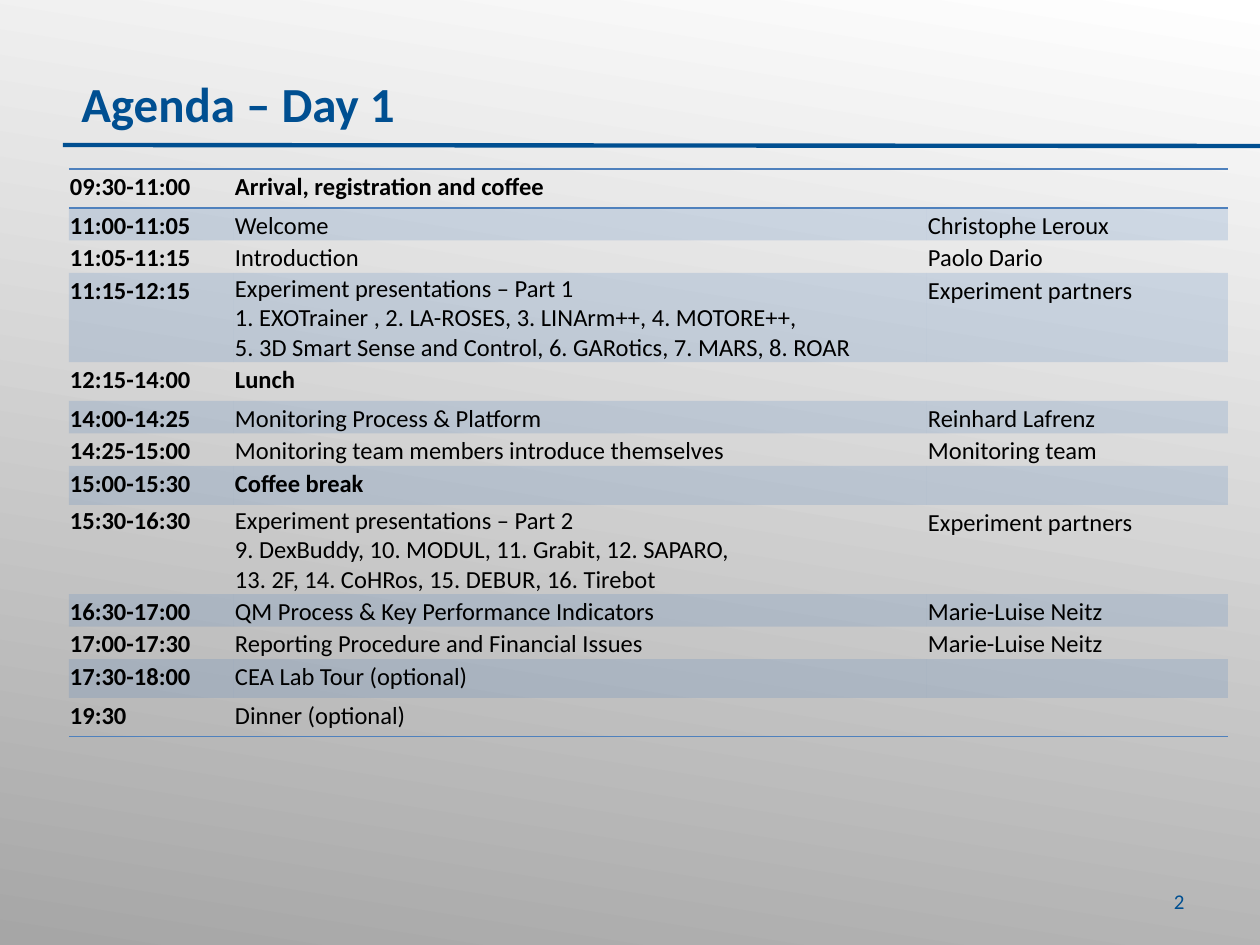
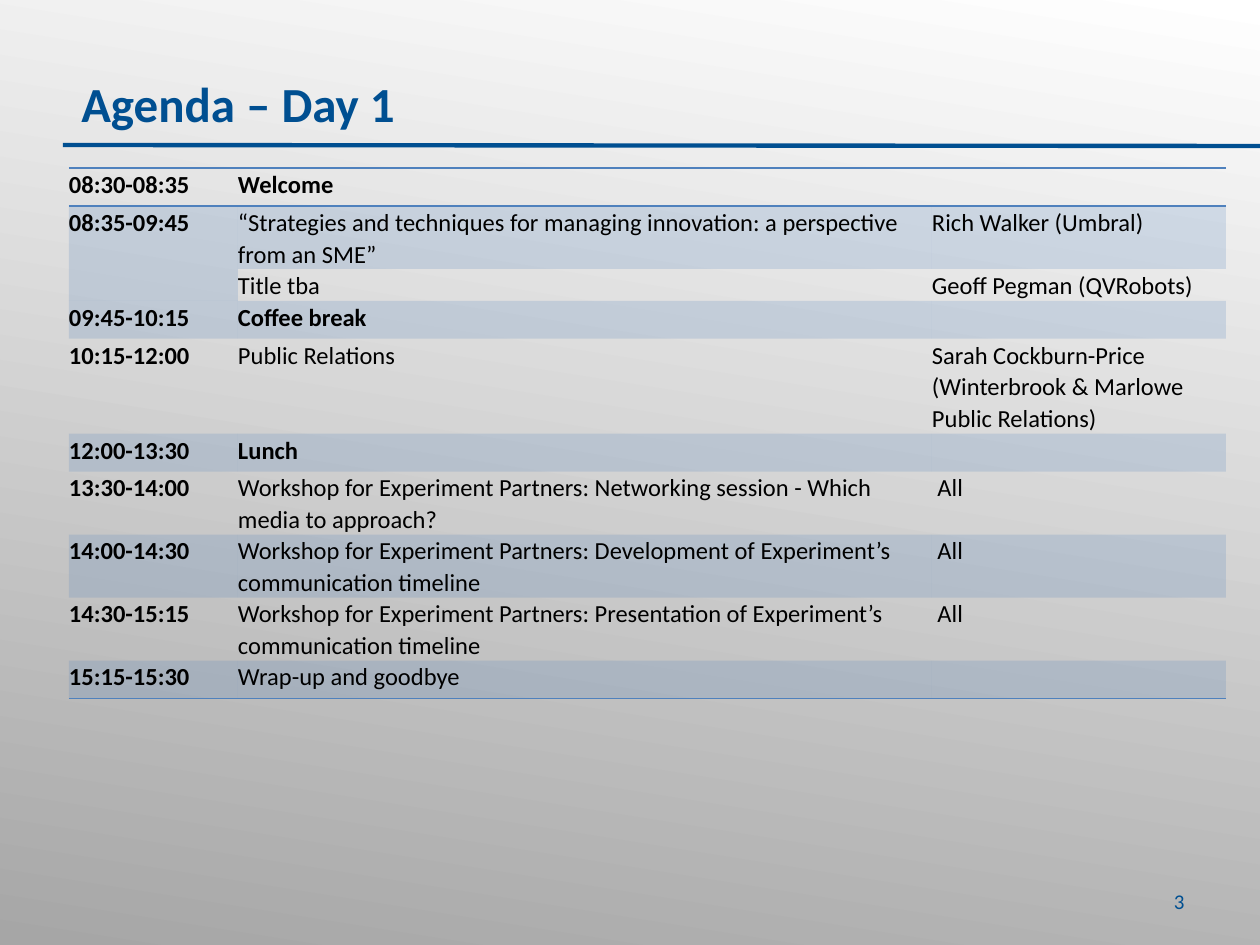
from dataclasses import dataclass

from lxml import etree
from pptx import Presentation
from pptx import util as u
from pptx.dml.color import RGBColor
from pptx.enum import shapes, text
from pptx.oxml.ns import qn

PX = 7257.6  # EMU per px at 126 px to the inch
WIDTH, HEIGHT = 1260, 945
FONT = "Calibri"
COLORS = {
    "title": "004F91",
    "body": "000000",
    "table": "4F81BD",
    "bg_top": "FFFFFF",
    "bg_bottom": "A6A6A6",
}
BAND_OPACITY = 20
LINE_SPACING = 1.07
NO_STYLE_NO_GRID = "{2D5ABB26-0587-4C30-8999-92F81FD0307C}"


@dataclass(frozen=True)
class Entry:
    time: str
    topic: str
    who: str = ""
    height: int = 32
    is_break: bool = False
    single_spaced: tuple[int, ...] = ()  # columns set without extra leading
    shares_time: bool = False  # the time cell of the row above extends here


@dataclass(frozen=True)
class Agenda:
    title: str
    number: int
    top: int
    columns: tuple[int, int, int]
    inset: int
    entries: tuple[Entry, ...]


AGENDAS = (
    Agenda("Agenda – Day 1", 2, 169, (165, 693, 301), 1, (
        Entry("09:30-11:00", "Arrival, registration and coffee", is_break=True),
        Entry("11:00-11:05", "Welcome", "Christophe Leroux"),
        Entry("11:05-11:15", "Introduction", "Paolo Dario"),
        Entry("11:15-12:15",
              "Experiment presentations – Part 1\n"
              "1. EXOTrainer , 2. LA-ROSES, 3. LINArm++, 4. MOTORE++,\n"
              "5. 3D Smart Sense and Control, 6. GARotics, 7. MARS, 8. ROAR",
              "Experiment partners", 89, single_spaced=(1,)),
        Entry("12:15-14:00", "Lunch", is_break=True),
        Entry("14:00-14:25", "Monitoring Process & Platform", "Reinhard Lafrenz"),
        Entry("14:25-15:00", "Monitoring team members introduce themselves",
              "Monitoring team"),
        Entry("15:00-15:30", "Coffee break", is_break=True),
        Entry("15:30-16:30",
              "Experiment presentations – Part 2\n"
              "9. DexBuddy, 10. MODUL, 11. Grabit, 12. SAPARO,\n"
              "13. 2F, 14. CoHRos, 15. DEBUR, 16. Tirebot",
              "Experiment partners", 89, single_spaced=(0, 1)),
        Entry("16:30-17:00", "QM Process & Key Performance Indicators",
              "Marie-Luise Neitz"),
        Entry("17:00-17:30", "Reporting Procedure and Financial Issues",
              "Marie-Luise Neitz"),
        Entry("17:30-18:00", "CEA Lab Tour (optional)"),
        Entry("19:30", "Dinner (optional)"),
    )),
    Agenda("Agenda – Day 1", 3, 168, (169, 694, 294), 0, (
        Entry("08:30-08:35", "Welcome", is_break=True),
        Entry("08:35-09:45",
              "“Strategies and techniques for managing innovation: "
              "a perspective from an SME”",
              "Rich Walker (Umbral)", 63),
        Entry("", "Title tba", "Geoff Pegman (QVRobots)", shares_time=True),
        Entry("09:45-10:15", "Coffee break", is_break=True),
        Entry("10:15-12:00", "Public Relations",
              "Sarah Cockburn-Price (Winterbrook & Marlowe Public Relations)", 95),
        Entry("12:00-13:30", "Lunch", is_break=True),
        Entry("13:30-14:00",
              "Workshop for Experiment Partners: Networking session - "
              "Which media to approach?", " All", 63),
        Entry("14:00-14:30",
              "Workshop for Experiment Partners: Development of "
              "Experiment’s communication timeline", " All", 63),
        Entry("14:30-15:15",
              "Workshop for Experiment Partners: Presentation of "
              "Experiment’s communication timeline", " All", 63),
        Entry("15:15-15:30", "Wrap-up and goodbye"),
    )),
)


def px(n: float) -> u.Emu:
    return u.Emu(round(n * PX))


def rgb(name: str) -> RGBColor:
    return RGBColor.from_string(COLORS[name])


def write(tf, content: str, *, size: int = 14, color: str = "body",
          bold: bool = False, align=None, spacing: float = 1.0,
          after: int = 0) -> None:
    """Fill a text frame, one paragraph per line of content."""
    for i, line in enumerate(content.split("\n")):
        p = tf.paragraphs[0] if i == 0 else tf.add_paragraph()
        p.line_spacing = spacing
        p.space_after = u.Pt(after)
        p.alignment = align
        r = p.add_run()
        r.text = line
        r.font.name = FONT
        r.font.size = u.Pt(size)
        r.font.bold = bold
        r.font.color.rgb = rgb(color)


def add_text(s, box: tuple[int, int, int, int], content: str, **fmt):
    tf = s.shapes.add_textbox(*map(px, box)).text_frame
    tf.word_wrap = True
    write(tf, content, **fmt)
    return tf


def draw_frame(s, agenda: Agenda) -> None:
    """Draw what all slides share: background, title, rule and number."""
    bg = s.shapes.add_shape(shapes.MSO_SHAPE.RECTANGLE, 0, 0, px(WIDTH), px(HEIGHT))
    bg.shadow.inherit = False
    bg.line.fill.background()
    bg.fill.gradient()
    bg.fill.gradient_angle = 261
    for stop, position, name in zip(bg.fill.gradient_stops, (0, 1),
                                    ("bg_top", "bg_bottom")):
        stop.position = position
        stop.color.rgb = rgb(name)

    rule = s.shapes.add_connector(shapes.MSO_CONNECTOR.STRAIGHT,
                                  px(63), px(145), px(WIDTH), px(146))
    rule.line.color.rgb = rgb("title")
    rule.line.width = u.Pt(2.5)
    etree.SubElement(rule._element.spPr, qn("a:effectLst"))

    title = add_text(s, (69, 74, 1139, 67), agenda.title, size=28, color="title",
                     bold=True, spacing=0.9, after=12)
    title.auto_size = text.MSO_AUTO_SIZE.SHAPE_TO_FIT_TEXT
    number = add_text(s, (903, 876, 294, 50), str(agenda.number), size=12,
                      color="title", align=text.PP_ALIGN.RIGHT)
    number.vertical_anchor = text.MSO_ANCHOR.MIDDLE


def add_border(cell, side: str) -> None:
    ln = etree.SubElement(cell._tc.get_or_add_tcPr(), qn(f"a:ln{side}"),
                          w=str(u.Pt(1)))
    fill = etree.SubElement(ln, qn("a:solidFill"))
    etree.SubElement(fill, qn("a:srgbClr"), val=COLORS["table"])


def fill_band(cell) -> None:
    cell.fill.solid()
    cell.fill.fore_color.rgb = rgb("table")
    color = cell._tc.tcPr.find(".//" + qn("a:solidFill") + "[last()]/" + qn("a:srgbClr")) \
        if cell._tc.tcPr.find(qn("a:lnB")) is None \
        else cell._tc.tcPr.find(qn("a:solidFill")).find(qn("a:srgbClr"))
    etree.SubElement(color, qn("a:alpha"), val=str(BAND_OPACITY * 1000))


def draw_agenda(s, agenda: Agenda) -> None:
    entries = agenda.entries
    table = s.shapes.add_table(
        len(entries), len(agenda.columns), px(69), px(agenda.top),
        px(sum(agenda.columns)), px(sum(e.height for e in entries))).table
    table.first_row = table.horz_banding = False
    table._tbl.tblPr.find(qn("a:tableStyleId")).text = NO_STYLE_NO_GRID
    for column, width in zip(table.columns, agenda.columns):
        column.width = px(width)

    last = len(entries) - 1
    for i, entry in enumerate(entries):
        table.rows[i].height = px(entry.height)
        bold = (True, entry.is_break, False)
        for j, content in enumerate((entry.time, entry.topic, entry.who)):
            cell = table.cell(i, j)
            cell.margin_left = cell.margin_right = cell.margin_top = px(agenda.inset)
            cell.margin_bottom = 0
            spacing = 1.0 if j in entry.single_spaced else LINE_SPACING
            write(cell.text_frame, content, bold=bold[j], spacing=spacing)
            if i == 0:
                add_border(cell, "T")
            if i in (0, last):
                add_border(cell, "B")
            if i % 2:
                fill_band(cell)
            else:
                cell.fill.background()
        if entry.shares_time:
            table.cell(i - 1, 0).merge(table.cell(i, 0))


def main() -> None:
    prs = Presentation()
    prs.slide_width, prs.slide_height = px(WIDTH), px(HEIGHT)
    for agenda in AGENDAS:
        s = prs.slides.add_slide(prs.slide_layouts[6])
        draw_frame(s, agenda)
        draw_agenda(s, agenda)
    prs.save("out.pptx")


if __name__ == "__main__":
    main()
